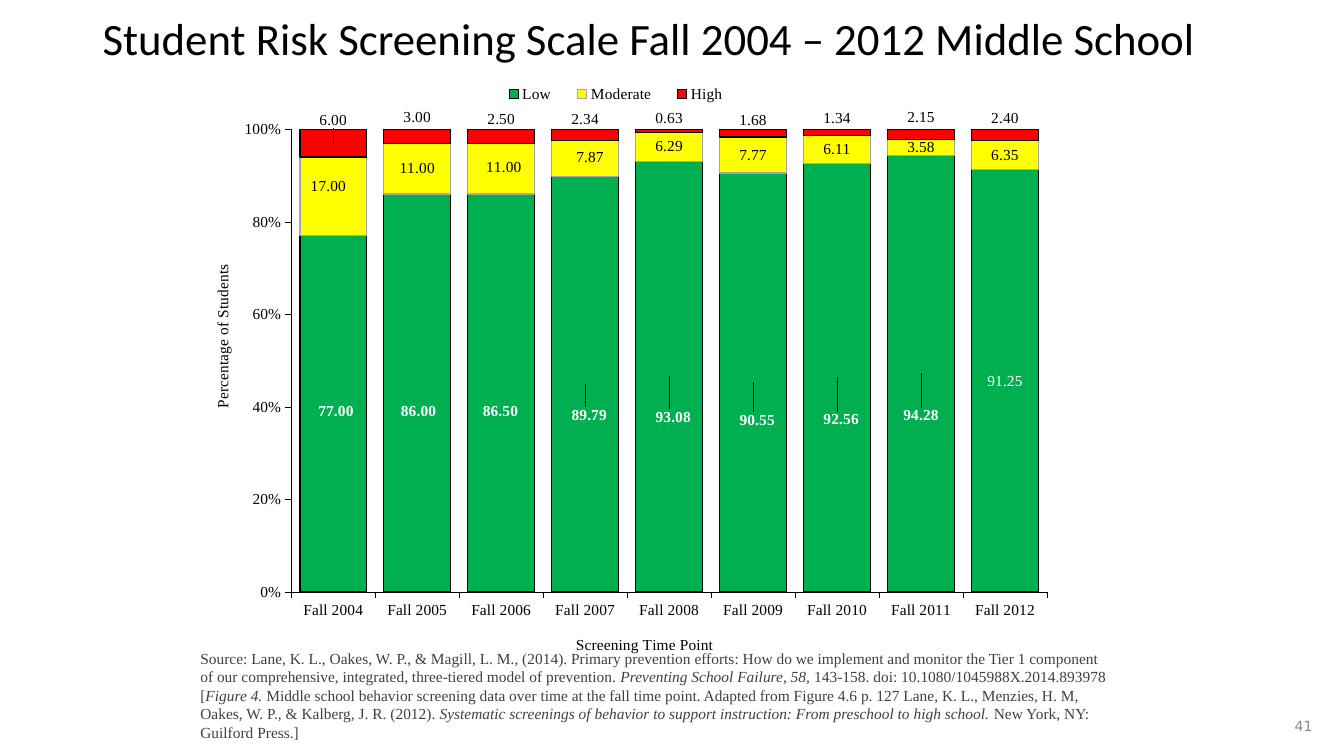
from lxml import etree
from pptx import Presentation
from pptx.chart.data import CategoryChartData
from pptx.dml.color import RGBColor
from pptx.enum.chart import XL_CHART_TYPE, XL_LEGEND_POSITION, XL_TICK_MARK
from pptx.enum.text import MSO_ANCHOR, MSO_AUTO_SIZE, PP_ALIGN
from pptx.oxml.ns import qn
from pptx.util import Pt

STACKED = XL_CHART_TYPE.COLUMN_STACKED_100
LEGEND_TOP = XL_LEGEND_POSITION.TOP
TICK_OUT, TICK_NONE = XL_TICK_MARK.OUTSIDE, XL_TICK_MARK.NONE
MIDDLE, TOP = MSO_ANCHOR.MIDDLE, MSO_ANCHOR.TOP
GROW = MSO_AUTO_SIZE.SHAPE_TO_FIT_TEXT
LEFT, RIGHT = PP_ALIGN.LEFT, PP_ALIGN.RIGHT

TITLE = "Student Risk Screening Scale Fall 2004 – 2012 Middle School"
PAGE_NUMBER = "41"
CATEGORY_TITLE = "Screening Time Point"
VALUE_TITLE = "Percentage of Students"
YEARS = range(2004, 2013)
# Each label: text, then its shift in points from the middle of its bar
SERIES = [
    {"name": "Low", "fill": "green", "line": "black", "text": "white",
     "plain_labels": {8},
     "values": [0.77, 0.86, 0.86, 0.8979, 0.9308, 0.9055, 0.9256, 0.9428, 0.9125],
     "labels": [("77.00", 2, -1.5), ("86.00", 1, 13), ("86.50", -0.5, 13),
                ("89.79", 3, 22), ("93.08", 3, 29), ("90.55", 3, 27),
                ("92.56", 3, 30), ("94.28", 0, 30), ("91.25", 0, 0)]},
    {"name": "Moderate", "fill": "yellow", "line": "gray", "text": "black",
     "plain_labels": set(range(9)),
     "values": [0.17, 0.11, 0.11, 0.0787, 0.0629, 0.0777, 0.0611, 0.0358, 0.0635],
     "labels": [("17.00", -3.5, -7), ("11.00", 0, 0), ("11.00", 2, -1),
                ("7.87", 3.5, -1), ("6.29", 0, 0), ("7.77", 0, 0),
                ("6.11", 0, 0), ("3.58", 0, 0), ("6.35", 0, 0)]},
    {"name": "High", "fill": "red", "line": "black", "text": "black",
     "plain_labels": set(range(9)),
     "values": [0.06, 0.03, 0.03, 0.0234, 0.0063, 0.0168, 0.0134, 0.0215, 0.024],
     "labels": [("6.00", 0, -16.5), ("3.00", 0, -13.5), ("2.50", 0, -12),
                ("2.34", 0, -11), ("0.63", 0, -9), ("1.68", 0, -9.5),
                ("1.34", 0, -10), ("2.15", 0, -12), ("2.40", 0, -12)]},
]
# Source note: text, italic
SOURCE_NOTE = [
    ("Source: Lane, K. L., Oakes, W. P., & Magill, L. M., (2014). Primary prevention "
     "efforts: How do we implement and monitor the Tier 1 component of our "
     "comprehensive, integrated, three-tiered model of prevention. ", False),
    ("Preventing School Failure, 58, ", True),
    ("143-158. doi: 10.1080/1045988X.2014.893978 [", False),
    ("Figure 4.", True),
    (" Middle school behavior screening data over time at the fall time point. "
     "Adapted from Figure 4.6 p. 127 Lane, K. L., Menzies, H. M, Oakes, W. P., & "
     "Kalberg, J. R. (2012). ", False),
    ("Systematic screenings of behavior to support instruction: From preschool to "
     "high school.", True),
    (" New York, NY: Guilford Press.]", False),
]
THEME = {
    "black": RGBColor(0, 0, 0), "white": RGBColor(255, 255, 255),
    "green": RGBColor(0, 176, 80), "yellow": RGBColor(255, 255, 0),
    "red": RGBColor(255, 0, 0), "gray": RGBColor(166, 166, 166),
    "note": RGBColor(64, 64, 64), "number": RGBColor(137, 137, 137),
    "title_font": "Calibri", "body_font": "Times New Roman",
    "number_font": "DejaVu Sans",
    "title_size": 32, "body_size": 11, "number_size": 10,
}
CHART_BOX = (66.25, 54.75, 762.5, 415.5)


def style_font(font, role, family="body", bold=False):
    font.name = THEME[family + "_font"]
    font.size = Pt(THEME[family + "_size"])
    font.color.rgb = THEME[role]
    font.bold = bold


def add_text(page, box, spans, role, family, anchor=MIDDLE, align=LEFT):
    shape = page.shapes.add_textbox(*map(Pt, box))
    frame = shape.text_frame
    frame.word_wrap = True
    frame.vertical_anchor = anchor
    para = frame.paragraphs[0]
    para.alignment = align
    for text, italic in spans:
        span = para.add_run()
        span.text = text
        style_font(span.font, role, family)
        span.font.italic = italic
    return frame


def make_layout(x, y, width=None, height=None, mode="edge", inner=False):
    """Manual chart layout, in fractions of the chart; mode None means a shift."""
    layout = etree.Element(qn("c:layout"))
    manual = etree.SubElement(layout, qn("c:manualLayout"))
    settings = [("layoutTarget", "inner" if inner else None),
                ("xMode", mode), ("yMode", mode),
                ("x", x), ("y", y), ("w", width), ("h", height)]
    for tag, value in settings:
        if value is not None:
            etree.SubElement(manual, qn("c:" + tag)).set("val", str(value))
    return layout


def set_layout(element, after, layout):
    """Put the layout in element, right behind its child named after."""
    for old in element.findall(qn("c:layout")):
        element.remove(old)
    previous = element.find(qn(after)) if after else None
    element.insert(0 if previous is None else element.index(previous) + 1, layout)


def style_axis(axis, title, x, y):
    axis.has_major_gridlines = False
    axis.major_tick_mark, axis.minor_tick_mark = TICK_OUT, TICK_NONE
    axis.format.line.color.rgb = THEME["black"]
    axis.format.line.width = Pt(0.21)
    style_font(axis.tick_labels.font, "black")
    span = axis.axis_title.text_frame.paragraphs[0].add_run()
    span.text = title
    style_font(span.font, "black")
    set_layout(axis.axis_title._element, "c:tx", make_layout(x, y))


def style_series(series, content):
    series.format.fill.solid()
    series.format.fill.fore_color.rgb = THEME[content["fill"]]
    series.format.line.color.rgb = THEME[content["line"]]
    series.format.line.width = Pt(0.83)
    labels = series.data_labels
    labels.show_value = True
    labels.number_format, labels.number_format_is_linked = "0.00%", False
    style_font(labels.font, content["text"], bold=content["name"] == "Low")
    for index, (text, shift_x, shift_y) in enumerate(content["labels"]):
        label = series.points[index].data_label
        span = label.text_frame.paragraphs[0].add_run()
        span.text = text
        style_font(span.font, content["text"],
                   bold=index not in content["plain_labels"])
        shift = make_layout(round(shift_x / CHART_BOX[2], 4),
                            round(shift_y / CHART_BOX[3], 4), mode=None)
        set_layout(labels._element.findall(qn("c:dLbl"))[index], "c:idx", shift)


def add_screening_chart(page):
    data = CategoryChartData(number_format="0.00%")
    data.categories = [f"Fall {year}" for year in YEARS]
    for content in SERIES:
        data.add_series(content["name"], content["values"])
    chart = page.shapes.add_chart(STACKED, *map(Pt, CHART_BOX), data).chart
    style_font(chart.font, "black")
    chart.has_title = False
    chart.has_legend = True
    chart.legend.position = LEGEND_TOP
    chart.legend.include_in_layout = False
    style_font(chart.legend.font, "black")
    set_layout(chart.legend._element, "c:legendPos",
               make_layout(0.37, 0.01, 0.24, 0.04))

    plot = chart.plots[0]
    plot.gap_width, plot.overlap = 26, 100
    plot.vary_by_categories = False
    set_layout(chart._chartSpace.chart.plotArea, None,
               make_layout(0.186, 0.091, 0.708, 0.799, inner=True))
    style_axis(chart.category_axis, CATEGORY_TITLE, 0.45, 0.96)
    style_axis(chart.value_axis, VALUE_TITLE, 0.11, 0.32)
    chart.value_axis.minimum_scale, chart.value_axis.maximum_scale = 0, 1
    chart.value_axis.major_unit = 0.2
    chart.value_axis.tick_labels.number_format = "0%"
    chart.value_axis.tick_labels.number_format_is_linked = False
    for series, content in zip(plot.series, SERIES):
        style_series(series, content)


def main():
    deck = Presentation()
    deck.slide_width, deck.slide_height = Pt(960), Pt(540)
    page = deck.slides.add_slide(deck.slide_layouts[6])
    add_text(page, (544.5, 504, 400, 28.75), [(PAGE_NUMBER, False)],
             "number", "number", align=RIGHT)
    title = add_text(page, (66.25, -23, 940, 104.5), [(TITLE, False)],
                     "black", "title")
    title.paragraphs[0].line_spacing = 0.9
    add_screening_chart(page)
    note = add_text(page, (136, 460, 663, 74), SOURCE_NOTE, "note", "body", anchor=TOP)
    note.auto_size = GROW
    deck.save("out.pptx")


if __name__ == "__main__":
    main()
